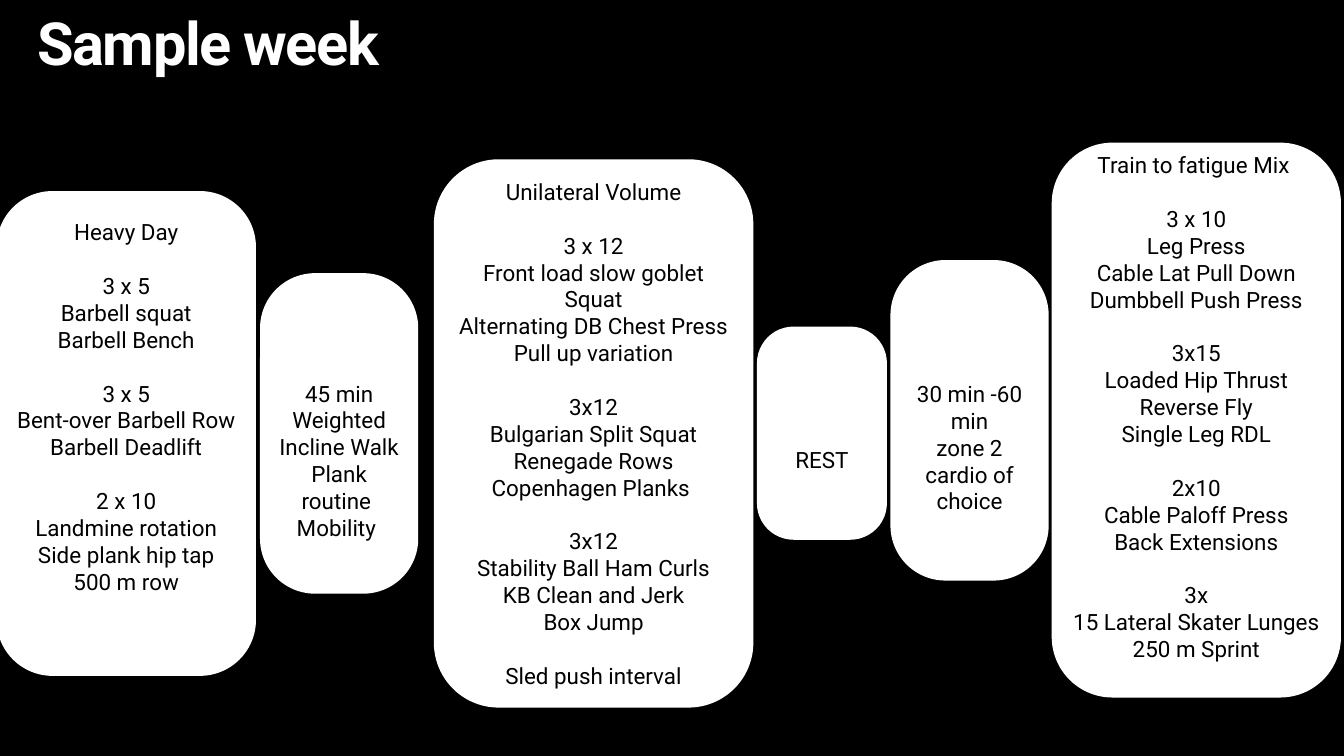
from pptx import Presentation
from pptx.dml.color import RGBColor
from pptx.enum import shapes, text
from pptx.util import Inches, Pt

COLORS = {"background": "000000", "card": "FFFFFF", "title": "FFFFFF", "body": "000000"}
LINE = 0.533          # height of one line of body text, inches
CORNER_INSET = 0.293  # share of a corner radius that a text area keeps clear

# left, top, width, height, corner ratio, text height,
# lines the text sits lower (+) or higher (-) by, sets of exercises
DAYS = [
    (-0.07, 3.79, 5.15, 9.62, 0.216, 12.01, -1, [
        ["Heavy Day"],
        ["3 x 5", "Barbell squat", "Barbell Bench"],
        ["3 x 5", "Bent-over Barbell Row", "Barbell Deadlift"],
        ["2 x 10", "Landmine rotation", "Side plank hip tap", "500 m row"],
    ]),
    (5.16, 5.42, 3.14, 6.36, 0.348, 5.51, 1, [
        ["45 min Weighted Incline Walk", "Plank routine ", "Mobility "],
    ]),
    (8.61, 3.16, 6.34, 10.88, 0.203, 10.93, 0, [
        ["Unilateral Volume"],
        ["3 x 12", "Front load slow goblet Squat", "Alternating DB Chest Press",
         "Pull up variation"],
        ["3x12", "Bulgarian Split Squat", "Renegade Rows", "Copenhagen Planks "],
        ["3x12", "Stability Ball Ham Curls", "KB Clean and Jerk", "Box Jump"],
        ["Sled push interval"],
    ]),
    (17.67, 5.16, 3.14, 6.36, 0.348, 4.43, 1, [
        ["30 min -60 min", "zone 2 cardio of choice"],
    ]),
    (15.02, 6.48, 2.58, 4.23, 0.282, 2.26, 1, [["REST"]]),
    (20.87, 2.83, 5.74, 11.01, 0.21, 12.01, -0.5, [
        ["Train to fatigue Mix "],
        ["3 x 10", "Leg Press", "Cable Lat Pull Down", "Dumbbell Push Press"],
        ["3x15", "Loaded Hip Thrust", "Reverse Fly", "Single Leg RDL"],
        ["2x10", "Cable Paloff Press", "Back Extensions"],
        ["3x", "15 Lateral Skater Lunges", "250 m Sprint"],
    ]),
]


class WeekSlide:
    font = "Roboto"
    title_size = 85
    body_size = 32
    margin = 0.06

    def __init__(self, deck):
        self.slide = deck.slides.add_slide(deck.slide_layouts[5])
        fill = self.slide.background.fill
        fill.solid()
        fill.fore_color.rgb = self.color("background")

    def color(self, name):
        return RGBColor.from_string(COLORS[name])

    def frame(self, shape, anchor):
        frame = shape.text_frame
        frame.word_wrap = True
        frame.auto_size = text.MSO_AUTO_SIZE.NONE
        frame.vertical_anchor = anchor
        frame.margin_left = frame.margin_right = Inches(self.margin)
        frame.margin_top = frame.margin_bottom = Inches(self.margin)
        return frame

    def run(self, paragraph, words, size, color, bold=False):
        run = paragraph.add_run()
        run.text = words
        run.font.name = self.font
        run.font.size = Pt(size)
        run.font.bold = bold
        run.font.color.rgb = self.color(color)
        return run

    def title(self, words, left, top, width, height):
        heading = self.slide.shapes.title
        heading.left, heading.top = Inches(left), Inches(top)
        heading.width, heading.height = Inches(width), Inches(height)
        paragraph = self.frame(heading, text.MSO_ANCHOR.TOP).paragraphs[0]
        paragraph.alignment = text.PP_ALIGN.LEFT
        paragraph.line_spacing = 0.8
        run = self.run(paragraph, words, self.title_size, "title", bold=True)
        run.font._element.set("spc", "-200")

    def day(self, left, top, width, height, corner, text_height, shift, sets):
        """Group a rounded card with its text, centred on the card and then shifted."""
        group = self.slide.shapes.add_group_shape().shapes
        card = group.add_shape(shapes.MSO_SHAPE.ROUNDED_RECTANGLE,
                               Inches(left), Inches(top), Inches(width), Inches(height))
        card.adjustments[0] = corner
        card.shadow.inherit = False
        card.fill.solid()
        card.fill.fore_color.rgb = self.color("card")
        card.line.fill.background()

        inset = CORNER_INSET * corner * min(width, height)
        plan = group.add_textbox(Inches(left + inset),
                                 Inches(top + (height - text_height) / 2),
                                 Inches(width - 2 * inset), Inches(text_height))
        frame = self.frame(plan, text.MSO_ANCHOR.MIDDLE)
        frame.margin_top = Inches(self.margin + 2 * LINE * max(shift, 0))
        frame.margin_bottom = Inches(self.margin + 2 * LINE * max(-shift, 0))

        for set_number, exercises in enumerate(sets):
            for position, exercise in enumerate(exercises):
                first = set_number == position == 0
                paragraph = frame.paragraphs[0] if first else frame.add_paragraph()
                paragraph.alignment = text.PP_ALIGN.CENTER
                if set_number and position == 0:
                    paragraph.space_before = Inches(LINE)
                self.run(paragraph, exercise, self.body_size, "body")


def main():
    deck = Presentation()
    deck.slide_width, deck.slide_height = Inches(26.67), Inches(15)
    week = WeekSlide(deck)
    week.title("Sample week", 0.68, 0.33, 24.03, 2.46)
    for day in DAYS:
        week.day(*day)
    deck.save("out.pptx")


if __name__ == "__main__":
    main()
